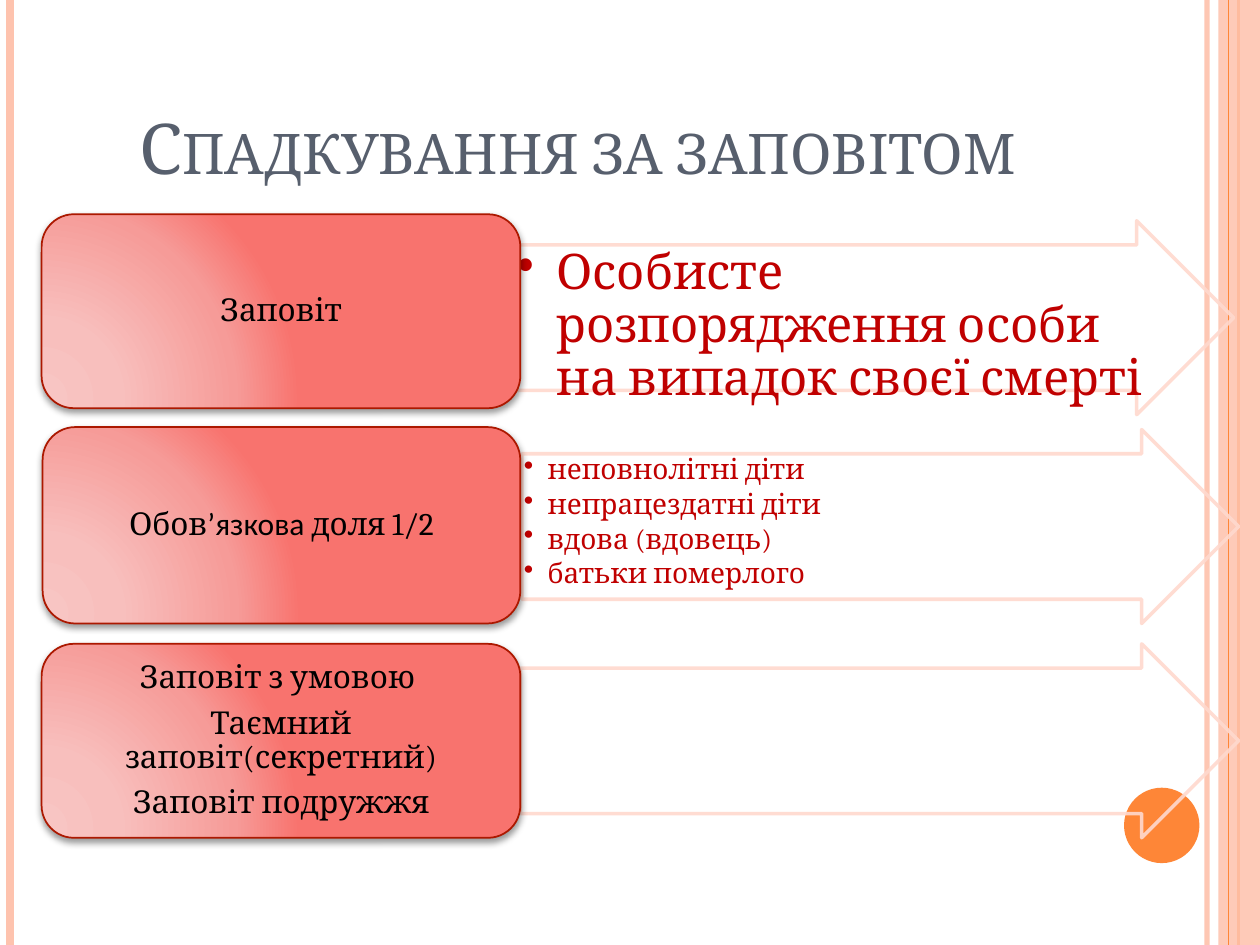
from lxml.etree import SubElement as Sub, fromstring
from pptx import Presentation
from pptx.dml.color import RGBColor
from pptx.enum.shapes import MSO_CONNECTOR as Link, MSO_SHAPE as Kind
from pptx.enum.text import MSO_ANCHOR as Anchor, PP_ALIGN as Align
from pptx.oxml.ns import qn
from pptx.util import Cm, Pt

NS = "http://schemas.openxmlformats.org/drawingml/2006/main"

# Content: a paragraph is a list of (text, font) runs
SERIF, SANS = "Cambria", "Calibri"
TITLE = [[("Спадкування за заповітом", SERIF)]]
ROWS = [
    dict(box=(0.84, 4.32, 9.65, 3.91), arrow=(10.39, 4.45, 14.48, 3.91),
         head=[[("Заповіт", SERIF)]],
         items=["Особисте розпорядження особи на випадок своєї смерті"],
         size=28, indent=0.79, after=4),
    dict(box=(0.86, 8.61, 9.63, 3.96), arrow=(10.52, 8.66, 14.45, 3.91),
         head=[[("Обов", SERIF), ("’язкова", SANS), (" доля 1/2", SERIF)]],
         items=["неповнолітні діти", "непрацездатні діти",
                "вдова (вдовець)", "батьки померлого"],
         size=16, indent=0.48, after=2.5),
    dict(box=(0.84, 12.98, 9.65, 3.91), arrow=(10.49, 12.98, 14.48, 3.91),
         head=[[("Заповіт з умовою ", SERIF)],
               [("Таємний заповіт(секретний)", SERIF)],
               [("Заповіт подружжя", SERIF)]],
         items=[]),
]
# Side rules: x, colour, width, opacity
RULES = [(24.33, "FEC3AE", 3, 93), (0.2, "FEC3AE", 4.5, 100),
         (24.97, "FE8637", 1.5, 100)]
THIN = (24.77, "FE8637", 0.75, 100)
STOPS = [(0, "F8C5C3"), (30, "F8BFBD"), (75, "F69B98"), (100, "F8736E")]

deck = Presentation()
deck.slide_width, deck.slide_height = Cm(25.4), Cm(19.05)
slide = deck.slides.add_slide(deck.slide_layouts[6])
shapes = slide.shapes


def paint(target, code, alpha=100):
    """Give a fill a solid colour and an opacity in percent."""
    target.solid()
    target.fore_color.rgb = RGBColor.from_string(code)
    if alpha < 100:
        tint = target._xPr.find(".//" + qn("a:srgbClr"))
        Sub(tint, qn("a:alpha"), val=str(alpha * 1000))


def stroke(line, code, width, alpha=100):
    line.width = Pt(width)
    paint(line.fill, code, alpha)


def rule(x, code, width, alpha):
    line = shapes.add_connector(Link.STRAIGHT, Cm(x), 0, Cm(x), deck.slide_height)
    stroke(line.line, code, width, alpha)
    Sub(line._element.spPr, qn("a:effectLst"))


def shape(kind, area):
    item = shapes.add_shape(kind, *map(Cm, area))
    item.shadow.inherit = False
    item.line.fill.background()
    return item


def text(paras, area, size, color, align=Align.CENTER, anchor=Anchor.MIDDLE,
         inset=(0.18, 0.1), space=1, after=0, indent=0, caps=False):
    frame = shapes.add_textbox(*map(Cm, area)).text_frame
    frame.word_wrap, frame.vertical_anchor = True, anchor
    frame.margin_left = frame.margin_right = Cm(inset[0])
    frame.margin_top = frame.margin_bottom = Cm(inset[1])
    for i, runs in enumerate(paras):
        para = frame.add_paragraph() if i else frame.paragraphs[0]
        para.alignment, para.line_spacing = align, space
        para.space_before, para.space_after = Pt(0), Pt(after)
        if indent:
            props = para._p.get_or_add_pPr()
            props.set("marL", str(Cm(indent)))
            props.set("indent", str(-Cm(indent)))
            Sub(props, qn("a:buChar"), char="•")
        for words, face in runs:
            run = para.add_run()
            run.text = words
            run.font.name, run.font.size = face, Pt(size)
            run.font.color.rgb = RGBColor.from_string(color)
            if caps:
                run._r.get_or_add_rPr().set("cap", "small")


def gloss(box):
    """Round gradient from the lower left corner, and a soft shadow."""
    stops = "".join(f'<a:gs pos="{pos * 1000}"><a:srgbClr val="{code}"/></a:gs>'
                    for pos, code in STOPS)
    grad = fromstring(
        f'<a:gradFill xmlns:a="{NS}" rotWithShape="1"><a:gsLst>{stops}</a:gsLst>'
        '<a:path path="circle"><a:fillToRect l="5000" t="100000" r="120000" '
        'b="10000"/></a:path></a:gradFill>')
    props = box._element.spPr
    props.find(qn("a:prstGeom")).addnext(grad)
    shade = Sub(props.find(qn("a:effectLst")), qn("a:outerShdw"),
                blurRad=str(Pt(4)), dist=str(Pt(2)), dir="5400000", rotWithShape="0")
    Sub(Sub(shade, qn("a:srgbClr"), val="000000"), qn("a:alpha"), val="40000")


# Side bands and dot
for spec_row in RULES:
    rule(*spec_row)
paint(shape(Kind.RECTANGLE, (24.56, 0, 0.84, 19.05)).fill, "FEC3AE", 87)
rule(*THIN)
paint(shape(Kind.OVAL, (22.66, 15.88, 1.52, 1.52)).fill, "FE8637")

# Title
text(TITLE, (1.27, 0.76, 20.75, 3.18), 40, "575F6D", anchor=Anchor.BOTTOM,
     inset=(0.25, 0.13), caps=True)

# Rows: arrow with its list, then the box over its tail
for row in ROWS:
    arrow = shape(Kind.RIGHT_ARROW, row["arrow"])
    arrow.adjustments[0], arrow.adjustments[1] = 0.75, 0.5
    arrow.fill.background()
    stroke(arrow.line, "FFD9CE", 2, 90)
    x, y, w, h = row["arrow"]
    if row["items"]:
        text([[(item, SERIF)] for item in row["items"]],
             (x, y + h / 8, w - 1.47, h * 0.75), row["size"], "C00000",
             align=Align.LEFT, anchor=Anchor.TOP, inset=(0.04, 0.04),
             space=0.9, after=row["after"], indent=row["indent"])

    box = shape(Kind.ROUNDED_RECTANGLE, row["box"])
    stroke(box.line, "AC1800", 1)
    box._element.spPr.remove(box._element.spPr.find(qn("a:solidFill"))) \
        if box._element.spPr.find(qn("a:solidFill")) is not None else None
    gloss(box)
    x, y, w, h = row["box"]
    text(row["head"], (x + 0.2, y + 0.2, w - 0.4, h - 0.4), 18, "000000",
         space=0.9, after=6.5)

deck.save("out.pptx")
